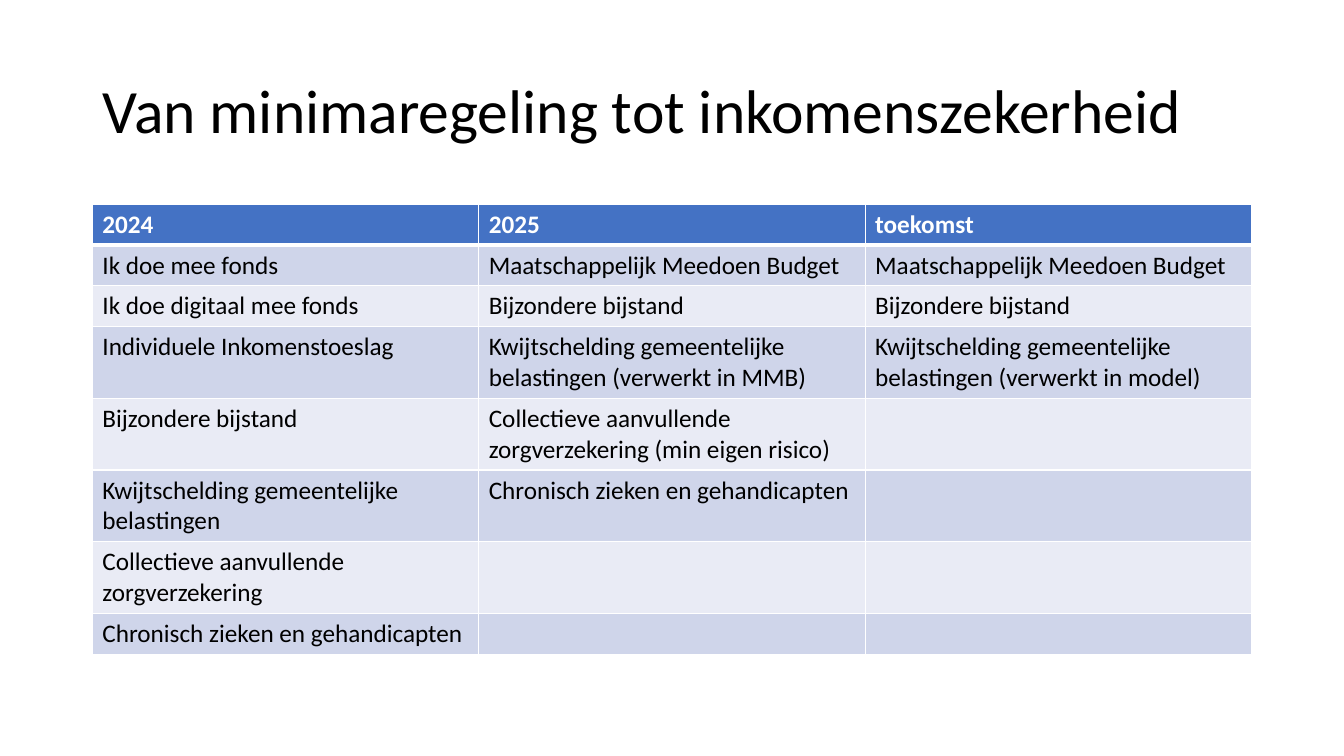
from lxml import etree
from pptx import Presentation
from pptx.dml.color import RGBColor
from pptx.enum.text import MSO_ANCHOR, MSO_AUTO_SIZE, PP_ALIGN
from pptx.oxml.ns import qn
from pptx.util import Pt

MIDDLE = MSO_ANCHOR.MIDDLE
NO_FIT = MSO_AUTO_SIZE.NONE
LEFT = PP_ALIGN.LEFT

WHITE = RGBColor(0xFF, 0xFF, 0xFF)
BLACK = RGBColor(0, 0, 0)
BLUE = RGBColor(0x44, 0x72, 0xC4)
BANDS = [RGBColor(0xCF, 0xD5, 0xEA), RGBColor(0xE9, 0xEB, 0xF5)]

TITLE = "Van minimaregeling tot inkomenszekerheid"
ROWS = [
    ["2024", "2025", "toekomst"],
    ["Ik doe mee fonds", "Maatschappelijk Meedoen Budget", "Maatschappelijk Meedoen Budget"],
    ["Ik doe digitaal mee fonds", "Bijzondere bijstand", "Bijzondere bijstand"],
    ["Individuele Inkomenstoeslag",
     "Kwijtschelding gemeentelijke belastingen (verwerkt in MMB)",
     "Kwijtschelding gemeentelijke belastingen (verwerkt in model)"],
    ["Bijzondere bijstand", "Collectieve aanvullende zorgverzekering (min eigen risico)", ""],
    ["Kwijtschelding gemeentelijke belastingen", "Chronisch zieken en gehandicapten", ""],
    ["Collectieve aanvullende zorgverzekering", "", ""],
    ["Chronisch zieken en gehandicapten", "", ""],
]


class Page:
    face = "Calibri"

    def __init__(self, deck):
        self.slide = deck.slides.add_slide(deck.slide_layouts[5])

    def style(self, part, form):
        for name, value in form.items():
            setattr(part, name, value)

    def label(self, para, text, size, color, bold=False):
        run = para.add_run()
        run.text = text
        self.style(run.font, {"name": self.face, "size": Pt(size), "bold": bold})
        run.font.color.rgb = color

    def title(self, text, left, top, width, height):
        box = self.slide.shapes.title
        self.style(box, {"left": Pt(left), "top": Pt(top),
                         "width": Pt(width), "height": Pt(height)})
        frame = box.text_frame
        self.style(frame, {"auto_size": NO_FIT, "word_wrap": True,
                           "vertical_anchor": MIDDLE})
        para = frame.paragraphs[0]
        self.style(para, {"alignment": LEFT, "line_spacing": 0.9})
        self.label(para, text, 44, BLACK)

    def edge(self, cell, side, width):
        props = cell._tc.get_or_add_tcPr()
        line = etree.SubElement(props, qn("a:ln" + side), w=str(Pt(width)))
        fill = etree.SubElement(line, qn("a:solidFill"))
        etree.SubElement(fill, qn("a:srgbClr"), val=str(WHITE))

    def table(self, rows, left, top, width, step):
        count = len(rows[0])
        frame = self.slide.shapes.add_table(
            len(rows), count, Pt(left), Pt(top), Pt(width), Pt(step * len(rows)))
        grid = frame.table
        for col in grid.columns:
            col.width = Pt(width / count)
        for i, row in enumerate(rows):
            grid.rows[i].height = Pt(step)
            head = i == 0
            above = 3 if i == 1 else 1
            below = 3 if head else 1
            for j, text in enumerate(row):
                cell = grid.cell(i, j)
                for side, size in (("L", 1), ("R", 1), ("T", above), ("B", below)):
                    self.edge(cell, side, size)
                cell.fill.solid()
                cell.fill.fore_color.rgb = BLUE if head else BANDS[(i - 1) % 2]
                if text:
                    self.label(cell.text_frame.paragraphs[0], text, 18,
                               WHITE if head else BLACK, head)


def main():
    deck = Presentation()
    deck.slide_width, deck.slide_height = Pt(960), Pt(540)
    page = Page(deck)
    page.title(TITLE, 66, 28.75, 828, 104.4)
    page.table(ROWS, 66, 145.8, 828, 29.2)
    deck.save("out.pptx")


if __name__ == "__main__":
    main()
